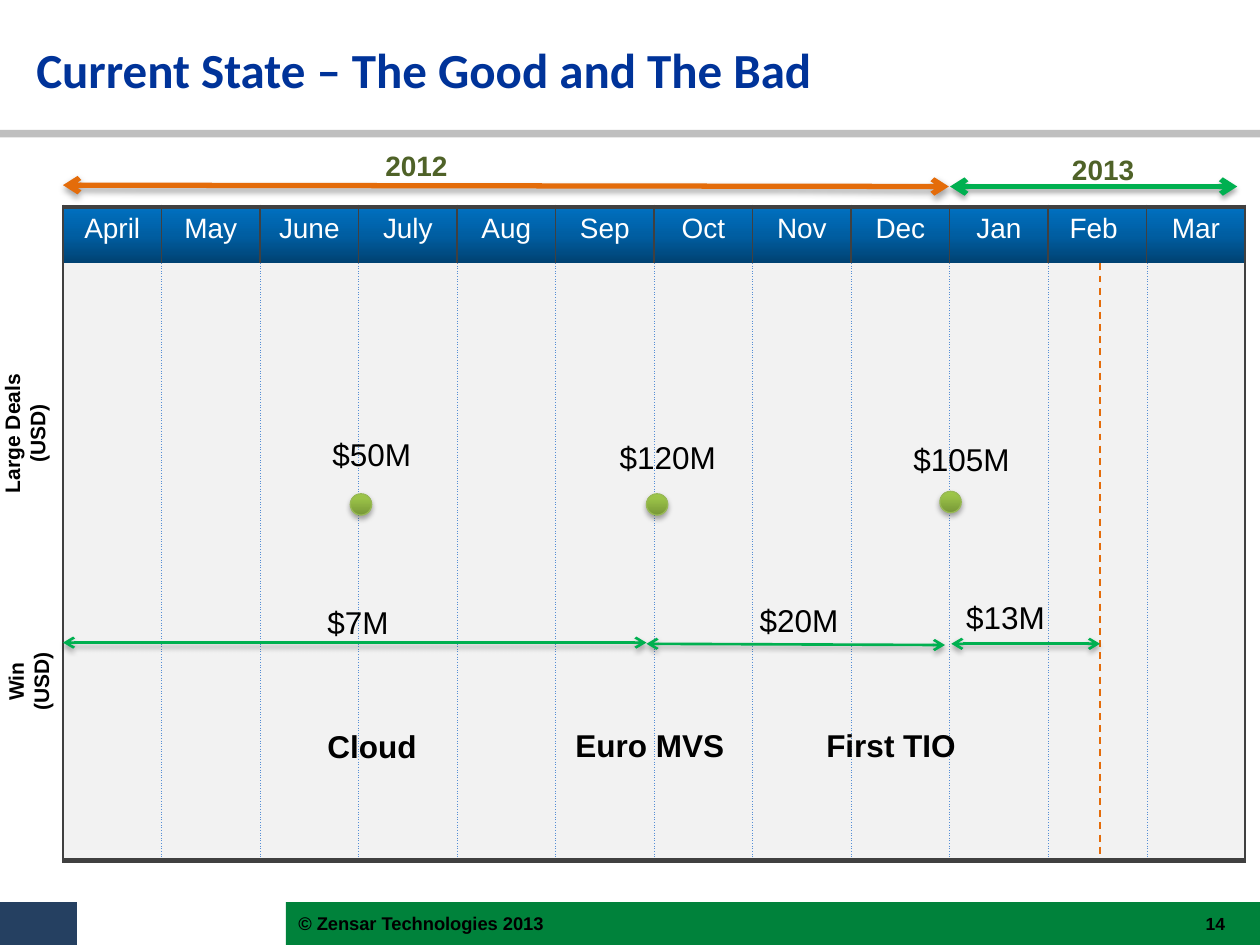
from lxml.etree import SubElement
from pptx import Presentation
from pptx.dml.color import RGBColor
from pptx.enum.dml import MSO_LINE as Dash
from pptx.enum.shapes import MSO_CONNECTOR as Connector, MSO_SHAPE as Shape
from pptx.enum.text import MSO_ANCHOR as Anchor, PP_ALIGN as Align
from pptx.oxml.ns import qn
from pptx.util import Pt

BLACK, GREEN, ORANGE, OLIVE = "000000", "00B050", "E46C0A", "4F6228"
EDGE, GRID, PANEL = "404040", "558ED5", "F2F2F2"
HEADER_STOPS = [(0, "004272"), (50, "005EA2"), (100, "0070C0")]
DOT_STOPS = [(0, "779737"), (80, "9BC348"), (100, "9DC746")]
NO_TABLE_STYLE = "{2D5ABB26-0587-4C30-8999-92F81FD0307C}"
MONTHS = ["April", "May", "June", "July", "Aug", "Sep",
          "Oct", "Nov", "Dec", "Jan", "Feb ", "Mar"]


def color(code):
    return RGBColor.from_string(code)


def add_node(parent, tag, **attributes):
    return SubElement(parent, qn(tag), {key: str(value) for key, value in attributes.items()})


def paint_gradient(fill, holder, stops):
    fill.gradient()
    fill.gradient_angle = 90
    stop_list = next(holder.iter(qn("a:gsLst")))
    for stop in list(stop_list):
        stop_list.remove(stop)
    for position, code in stops:
        stop = add_node(stop_list, "a:gs", pos=position * 1000)
        add_node(stop, "a:srgbClr", val=code)


def add_shadow(effects):
    shadow = add_node(effects, "a:outerShdw", blurRad=Pt(3.1), dist=Pt(1.8),
                      dir=5400000, rotWithShape=0)
    tint = add_node(shadow, "a:srgbClr", val=BLACK)
    add_node(tint, "a:alpha", val=35000)


def add_border(cell, side, style):
    code, width, dash = style
    border = add_node(cell._tc.get_or_add_tcPr(), f"a:ln{side}", w=Pt(width))
    add_node(add_node(border, "a:solidFill"), "a:srgbClr", val=code)
    add_node(border, "a:prstDash", val=dash)


class Slide:
    font = "Arial"
    thin, thick, dotted = (EDGE, 1, "solid"), (EDGE, 3, "solid"), (GRID, 0.25, "sysDot")

    def __init__(self, page):
        self.page = page

    def format(self, para, size, code, bold=False, align=Align.LEFT, font=None):
        para.alignment = align
        for span in para.runs:
            span.font.name = font or self.font
            span.font.size = Pt(size)
            span.font.bold = bold
            span.font.color.rgb = color(code)

    def text(self, words, left, top, width, height, size=18, code=BLACK, bold=False,
             align=Align.LEFT, font=None, anchor=Anchor.TOP, wrap=False, rotation=0):
        box = self.page.shapes.add_textbox(Pt(left), Pt(top), Pt(width), Pt(height))
        box.rotation = rotation
        frame = box.text_frame
        frame.word_wrap = wrap
        frame.vertical_anchor = anchor
        frame.text = words
        for para in frame.paragraphs:
            self.format(para, size, code, bold, align, font)

    def bar(self, left, top, width, height, code):
        bar = self.page.shapes.add_shape(Shape.RECTANGLE, Pt(left), Pt(top), Pt(width), Pt(height))
        bar.shadow.inherit = False
        bar.fill.solid()
        bar.fill.fore_color.rgb = color(code)
        bar.line.fill.background()

    def dot(self, left, top, size=12.2):
        dot = self.page.shapes.add_shape(Shape.OVAL, Pt(left), Pt(top), Pt(size), Pt(size))
        paint_gradient(dot.fill, dot._element.spPr, DOT_STOPS)
        dot.line.color.rgb = color("98B955")
        dot.line.width = Pt(0.75)
        dot.shadow.inherit = False
        add_shadow(dot._element.spPr.find(qn("a:effectLst")))

    def line(self, start, end, code, width, arrows=True):
        line = self.page.shapes.add_connector(
            Connector.STRAIGHT, *[Pt(value) for value in (*start, *end)])
        line.line.color.rgb = color(code)
        line.line.width = Pt(width)
        effects = add_node(line._element.spPr, "a:effectLst")
        if arrows:
            for tag in ("a:headEnd", "a:tailEnd"):
                add_node(line.line._get_or_add_ln(), tag, type="arrow")
            add_shadow(effects)
        else:
            line.line.dash_style = Dash.DASH

    def calendar(self, left, top, width, heights):
        frame = self.page.shapes.add_table(len(heights), len(MONTHS), Pt(left), Pt(top),
                                           Pt(width), Pt(sum(heights)))
        table = frame.table
        table._tbl.tblPr.find(qn("a:tableStyleId")).text = NO_TABLE_STYLE
        table.horz_banding = False
        for column in table.columns:
            column.width = Pt(width / len(MONTHS))
        last_row, last_column = len(heights) - 1, len(MONTHS) - 1
        for row, height in enumerate(heights):
            table.rows[row].height = Pt(height)
            for column, month in enumerate(MONTHS):
                cell = table.cell(row, column)
                add_border(cell, "L", self.thin if row == 0 or column == 0 else self.dotted)
                add_border(cell, "R", self.thin if row == 0 or column == last_column else self.dotted)
                if row == 0:
                    add_border(cell, "T", self.thick)
                    paint_gradient(cell.fill, cell._tc, HEADER_STOPS)
                    cell.text_frame.text = month
                    self.format(cell.text_frame.paragraphs[0], 16, "FFFFFF", align=Align.CENTER)
                    continue
                if row == last_row:
                    add_border(cell, "B", self.thick)
                cell.fill.solid()
                cell.fill.fore_color.rgb = color(PANEL)


def main():
    deck = Presentation()
    deck.slide_width, deck.slide_height = Pt(720), Pt(540)
    slide = Slide(deck.slides.add_slide(deck.slide_layouts[6]))

    slide.bar(163.4, 515.5, 556.6, 24.5, "00823B")
    slide.bar(0, 515.5, 43.9, 24.5, "254061")
    slide.bar(0, 74.2, 720, 4.3, "BFBFBF")
    slide.text("Current State – The Good and The Bad", 13.7, 3.6, 566.6, 71.3, 28, "003399",
               True, font="Calibri", anchor=Anchor.MIDDLE, wrap=True)
    slide.calendar(36, 118.3, 675.6, [32] + [48.5] * 3 + [50.5] + [48.5] * 3)

    for left, top in [(200.2, 282.2), (369.4, 282.2), (537.1, 280.8)]:
        slide.dot(left, top)
    for words, left, top, width in [("Large Deals\n(USD)", -36, 229.7, 100),
                                    ("Win\n(USD)", -8, 371.5, 48.2)]:
        slide.text(words, left, top, width, 36, 12, bold=True, align=Align.CENTER, rotation=270)

    for words, left, top, width in [
            ("$50M", 182.9, 244.8, 59.8), ("$120M", 347, 247, 69.8), ("$105M", 514.8, 247.7, 69.8),
            ("$7M", 180, 341.3, 49.7), ("$20M", 427, 339.8, 59.8), ("$13M", 545, 338.4, 59.8)]:
        slide.text(words, left, top, width, 28.8)
    for words, left, top, width in [("Cloud", 180, 411.8, 66.2), ("Euro MVS", 321.8, 411.1, 100),
                                    ("First TIO", 465.1, 411.1, 89.3)]:
        slide.text(words, left, top, width, 28.8, bold=True)

    slide.line((628.6, 150.5), (628.6, 488.9), ORANGE, 1, arrows=False)
    for start, end, code, width in [
            ((36, 367.2), (369.4, 367.2), GREEN, 1.5), ((369.4, 367.9), (540, 368.6), GREEN, 1.5),
            ((543.6, 367.9), (628.6, 367.9), GREEN, 1.5), ((36, 105.8), (542.2, 106.6), ORANGE, 3),
            ((542.9, 106.6), (707, 106.6), GREEN, 3)]:
        slide.line(start, end, code, width)
    slide.text("2012", 213.1, 81.4, 50.4, 26.6, 16, OLIVE, True)
    slide.text("2013", 605.5, 83.5, 59.8, 26.6, 16, OLIVE, True, wrap=True)

    slide.text("14", 539.3, 517, 167.8, 21.6, 10, bold=True, align=Align.RIGHT,
               anchor=Anchor.MIDDLE, wrap=True)
    slide.text("© Zensar Technologies 2013", 163.4, 517, 257, 21.6, 10.5, bold=True,
               anchor=Anchor.MIDDLE, wrap=True)
    deck.save("out.pptx")


if __name__ == "__main__":
    main()
